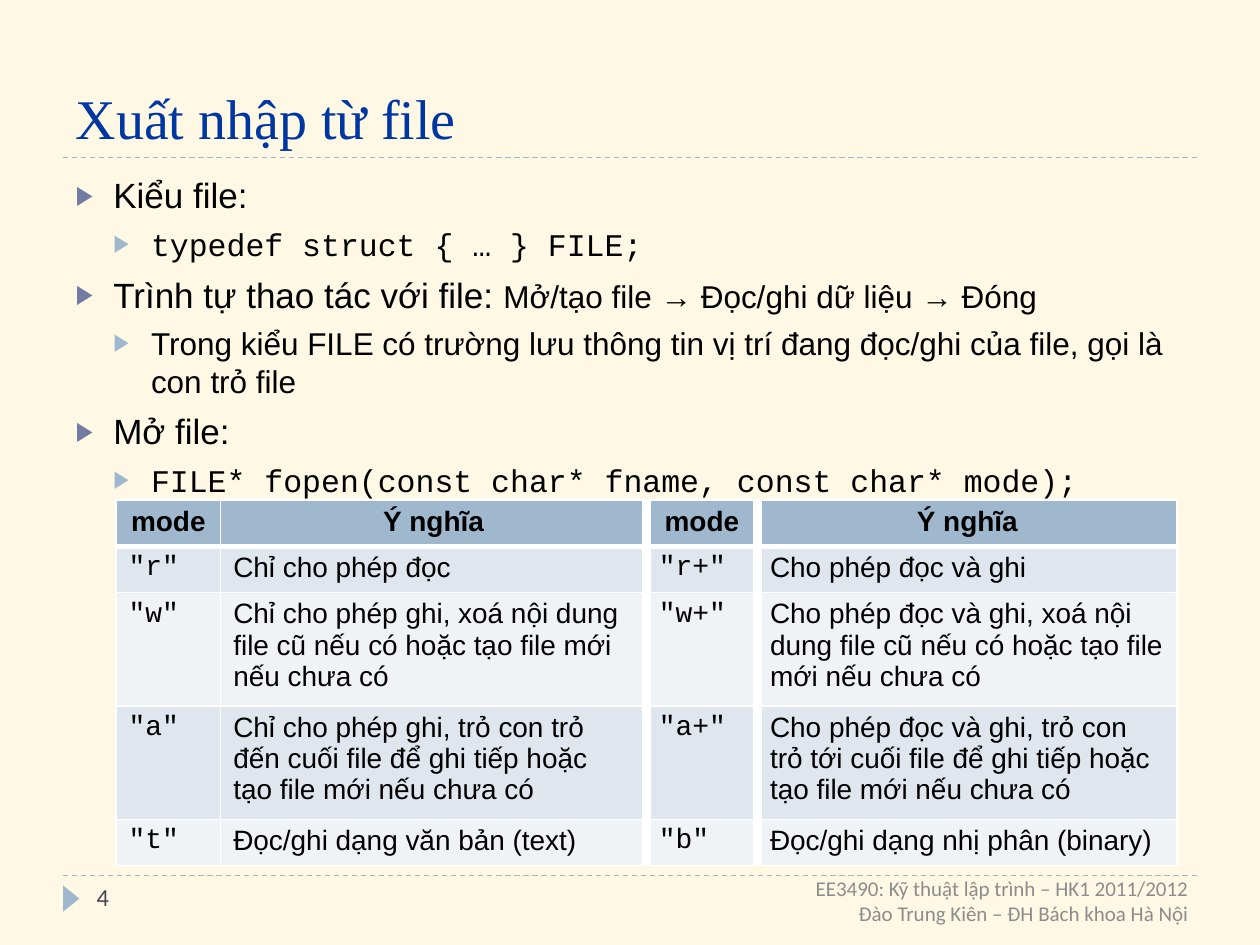
import lxml.etree
import pptx
import pptx.dml.color
import pptx.enum.dml
import pptx.enum.shapes
import pptx.enum.text
import pptx.oxml.ns
import pptx.util

Cm, Pt = pptx.util.Cm, pptx.util.Pt
ALIGN = pptx.enum.text.PP_ALIGN
ANCHOR = pptx.enum.text.MSO_ANCHOR

COLORS = {
    "background": "FEF8E4", "title": "0036A2", "text": "000000",
    "accent": "9FB8CD", "bullet": "727CA3", "number": "464653",
    "footer": "8C8C8C", "border": "FFFFFF", "odd": "DFE6ED", "even": "F0F3F6",
}
SANS, MONO = "Arial", "Courier New"

# Level, then runs of text, size and font
OUTLINE = [
    (0, [("Kiểu file:", 20, SANS)]),
    (1, [("typedef struct { … } FILE;", 18, MONO)]),
    (0, [("Trình tự thao tác với file: ", 20, SANS),
         ("Mở/tạo file → Đọc/ghi dữ liệu → Đóng", 18, SANS)]),
    (1, [("Trong kiểu FILE có trường lưu thông tin vị trí đang đọc/ghi của file, "
          "gọi là con trỏ file", 18, SANS)]),
    (0, [("Mở file:", 20, SANS)]),
    (1, [("FILE* fopen(const char* fname, const char* mode);", 18, MONO)]),
]
MODES = [
    ("mode", "Ý nghĩa", "mode", "Ý nghĩa"),
    ('"r"', "Chỉ cho phép đọc", '"r+"', "Cho phép đọc và ghi"),
    ('"w"', "Chỉ cho phép ghi, xoá nội dung file cũ nếu có hoặc tạo file mới nếu chưa có",
     '"w+"', "Cho phép đọc và ghi, xoá nội dung file cũ nếu có hoặc tạo file mới nếu chưa có"),
    ('"a"', "Chỉ cho phép ghi, trỏ con trỏ đến cuối file để ghi tiếp hoặc tạo file mới nếu chưa có",
     '"a+"', "Cho phép đọc và ghi, trỏ con trỏ tới cuối file để ghi tiếp hoặc tạo file mới nếu chưa có"),
    ('"t"', "Đọc/ghi dạng văn bản (text)", '"b"', "Đọc/ghi dạng nhị phân (binary)"),
]


def rgb(name):
    return pptx.dml.color.RGBColor.from_string(COLORS[name])


def add_element(parent, tag, **attributes):
    element = lxml.etree.SubElement(parent, pptx.oxml.ns.qn(tag))
    for key, value in attributes.items():
        element.set(key, str(value))
    return element


def set_font(font, name, size, color, bold=False):
    font.name, font.size, font.bold = name, Pt(size), bold
    font.color.rgb = rgb(color)


def place(shape, box):
    shape.left, shape.top, shape.width, shape.height = (Cm(value) for value in box)


def add_rule(slide, left, top, width):
    line = slide.shapes.add_connector(
        pptx.enum.shapes.MSO_CONNECTOR.STRAIGHT, Cm(left), Cm(top), Cm(left + width), Cm(top))
    line.line.color.rgb = rgb("accent")
    line.line.width = Pt(0.75)
    line.line.dash_style = pptx.enum.dml.MSO_LINE.DASH
    add_element(line._element.spPr, "a:effectLst")


def add_text(slide, box, lines, size, color, align, anchor):
    shape = slide.shapes.add_textbox(*(Cm(value) for value in box))
    frame = shape.text_frame
    frame.word_wrap = True
    frame.vertical_anchor = anchor
    frame.text = "\n".join(lines)
    for paragraph in frame.paragraphs:
        paragraph.alignment = align
        set_font(paragraph.font, "Calibri", size, color)


def build_title(slide, box):
    left, top, width, height = box
    title = slide.shapes.title
    place(title, box)
    frame = title.text_frame
    frame.text = "Xuất nhập từ file"
    frame.auto_size = pptx.enum.text.MSO_AUTO_SIZE.NONE
    frame.vertical_anchor = ANCHOR.BOTTOM
    paragraph = frame.paragraphs[0]
    paragraph.alignment = ALIGN.LEFT
    set_font(paragraph.font, "Times New Roman", 32, "title")
    add_rule(slide, left, top + height, width)


def add_bullet(paragraph, level):
    properties = paragraph._p.get_or_add_pPr()
    properties.set("marL", str(Cm(0.76 * (level + 1))))
    properties.set("indent", str(-Cm(0.76)))
    color = add_element(properties, "a:buClr")
    add_element(color, "a:srgbClr", val=COLORS["accent" if level else "bullet"])
    add_element(properties, "a:buSzPct", val=76000)
    add_element(properties, "a:buFont", typeface=SANS)
    add_element(properties, "a:buChar", char="▶")


def build_outline(slide, box):
    body = slide.placeholders[1]
    place(body, box)
    frame = body.text_frame
    frame.auto_size = pptx.enum.text.MSO_AUTO_SIZE.NONE
    for index, (level, runs) in enumerate(OUTLINE):
        paragraph = frame.add_paragraph() if index else frame.paragraphs[0]
        paragraph.level = level
        add_bullet(paragraph, level)
        paragraph.space_before = Pt(6 - level if index else 0)
        _, size, name = runs[0]
        set_font(paragraph.font, name, size, "text")
        for text, run_size, _ in runs:
            run = paragraph.add_run()
            run.text = text
            if run_size != size:
                run.font.size = Pt(run_size)


def set_borders(cell, widths):
    properties = cell._tc.get_or_add_tcPr()
    for side, width in zip("LRTB", widths):
        line = add_element(properties, "a:ln" + side, w=Pt(width))
        fill = add_element(line, "a:solidFill")
        add_element(fill, "a:srgbClr", val=COLORS["border"])


def build_modes(slide, box):
    table = slide.shapes.add_table(
        len(MODES), len(MODES[0]), *(Cm(value) for value in box)).table
    for column, width in zip(table.columns, (2.11, 8.58, 2.24, 8.46)):
        column.width = Cm(width)
    for row, height in zip(table.rows, (0.82, 0.82, 1.98, 1.98, 0.82)):
        row.height = Cm(height)

    verticals = (1, 1, 6, 6, 1)
    horizontals = (1, 3, 1, 1, 1, 1)
    for row, texts in enumerate(MODES):
        header = row == 0
        fill = "accent" if header else "odd" if row % 2 else "even"
        for column, text in enumerate(texts):
            cell = table.cell(row, column)
            set_borders(cell, verticals[column:column + 2] + horizontals[row:row + 2])
            cell.fill.solid()
            cell.fill.fore_color.rgb = rgb(fill)
            cell.text = text
            paragraph = cell.text_frame.paragraphs[0]
            paragraph.alignment = ALIGN.CENTER if header else ALIGN.LEFT
            name = MONO if column % 2 == 0 and not header else SANS
            set_font(paragraph.font, name, 16, "text", header)


def build_footer(slide, box):
    left, top, width, height = box
    add_rule(slide, left, top, width)

    # Page marker
    marker = slide.shapes.add_shape(
        pptx.enum.shapes.MSO_SHAPE.ISOSCELES_TRIANGLE,
        Cm(left - 0.1), Cm(top + 0.3), Cm(0.53), Cm(0.33))
    marker.rotation = 90
    marker.shadow.inherit = False
    marker.fill.solid()
    marker.fill.fore_color.rgb = rgb("accent")
    marker.line.fill.background()

    add_text(slide, (left + 0.43, top, 5.5, height), ["4"], 14, "number",
             ALIGN.LEFT, ANCHOR.TOP)
    add_text(slide, (left + 7.42, top, 15.52, height),
             ["EE3490: Kỹ thuật lập trình – HK1 2011/2012",
              "Đào Trung Kiên – ĐH Bách khoa Hà Nội"],
             12, "footer", ALIGN.RIGHT, ANCHOR.MIDDLE)


def main():
    presentation = pptx.Presentation()
    presentation.slide_width, presentation.slide_height = Cm(25.4), Cm(19.05)
    slide = presentation.slides.add_slide(presentation.slide_layouts[1])
    slide.background.fill.solid()
    slide.background.fill.fore_color.rgb = rgb("background")

    build_title(slide, (1.27, 0.43, 22.86, 2.74))
    build_outline(slide, (1.27, 3.38, 22.86, 13.72))
    build_footer(slide, (1.27, 17.65, 22.86, 1.02))
    build_modes(slide, (2.34, 10.08, 21.39, 6.42))
    presentation.save("out.pptx")


if __name__ == "__main__":
    main()
